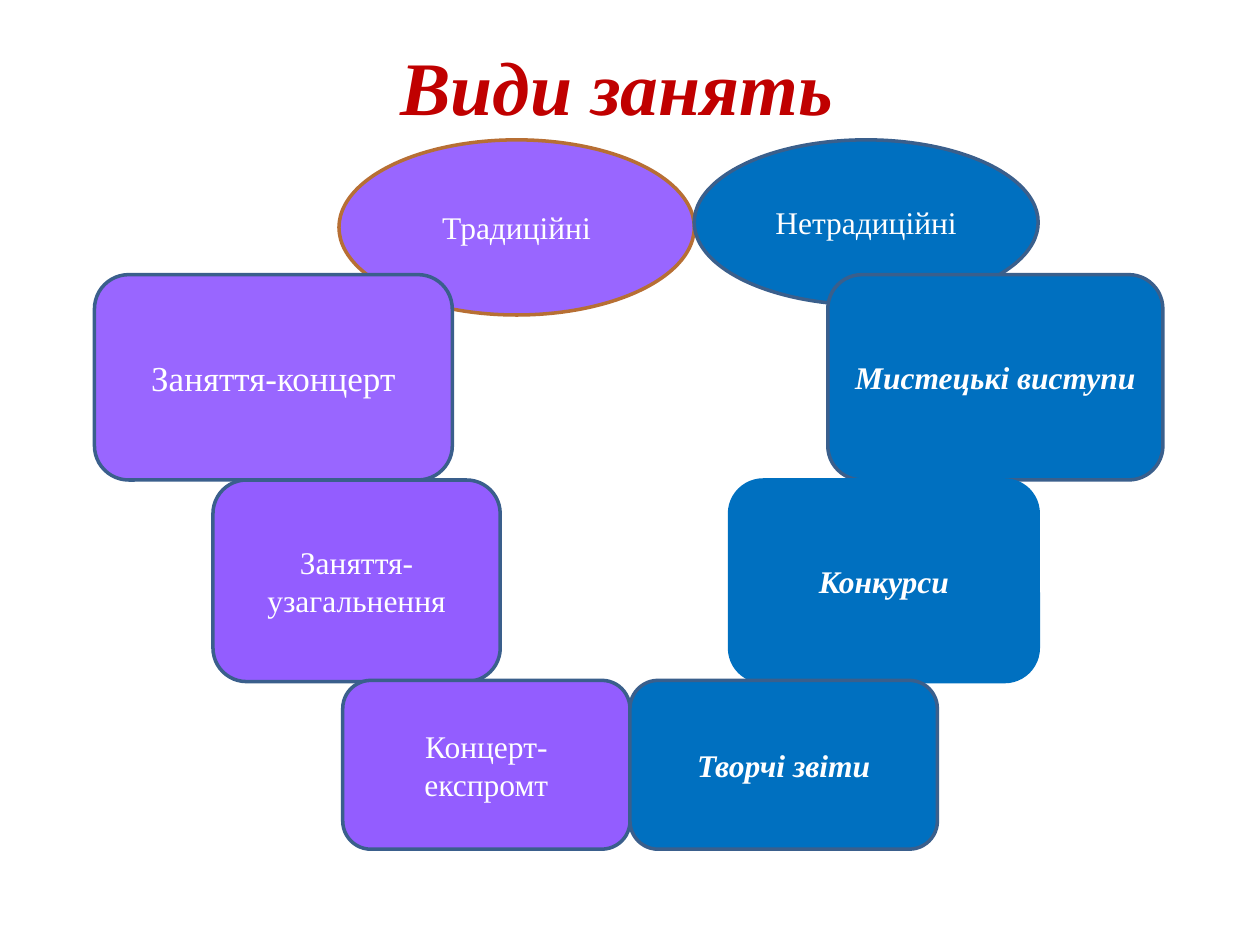
from dataclasses import dataclass

from pptx import Presentation
from pptx.dml.color import RGBColor
from pptx.enum import shapes, text
from pptx.util import Inches, Pt


@dataclass(frozen=True)
class Theme:
    """Hold the colours, font and type sizes of the slide."""
    font: str = "Times New Roman"
    red: str = "C00000"
    white: str = "FFFFFF"
    lilac: str = "9966FF"
    violet: str = "935DFF"
    blue: str = "0070C0"
    edge: str = "3A5F8C"
    brown: str = "B76F34"
    title: float = 43.2
    large: float = 20
    body: float = 18


T = Theme()
ROUND = shapes.MSO_SHAPE.ROUNDED_RECTANGLE
OVAL = shapes.MSO_SHAPE.OVAL
ROWS = ((1.07, 1.63), (2.7, 1.6), (4.29, 1.34))


def write(shape, words, size, color, strong):
    """Centre the words in the shape and format them."""
    frame = shape.text_frame
    frame.word_wrap = True
    frame.vertical_anchor = text.MSO_ANCHOR.MIDDLE
    frame.text = words
    para = frame.paragraphs[0]
    para.alignment = text.PP_ALIGN.CENTER
    font = para.runs[0].font
    font.name, font.size = T.font, Pt(size)
    font.bold = font.italic = strong
    font.color.rgb = RGBColor.from_string(color)


def draw(slide, kind, box, words, fill, edge=T.edge, size=T.body, strong=False):
    """Draw one filled and outlined shape with its label."""
    shape = slide.shapes.add_shape(kind, *map(Inches, box))
    shape.shadow.inherit = False
    shape.fill.solid()
    shape.fill.fore_color.rgb = RGBColor.from_string(fill)
    shape.line.color.rgb = RGBColor.from_string(edge)
    shape.line.width = Pt(2)
    write(shape, words, size, T.white, strong)


def head(slide, box):
    """Place the slide title in the box."""
    label = slide.shapes.add_textbox(*map(Inches, box))
    write(label, "Види занять", T.title, T.red, True)


def branch(slide, box, oval, cards):
    """Place an oval and its stepped cards from the top left of the box."""
    left, top = box[:2]
    shift, width, height, words, look = oval
    draw(slide, OVAL, (left + shift, top, width, height), words, **look)
    for (drop, tall), (shift, width, words, look) in zip(ROWS, cards):
        place = (left + shift, top + drop, width, tall)
        draw(slide, ROUND, place, words, **look)


def main():
    """Build the slide and save it."""
    deck = Presentation()
    deck.slide_width, deck.slide_height = Inches(10), Inches(7.5)
    slide = deck.slides.add_slide(deck.slide_layouts[6])
    head(slide, (1.29, 0.24, 7.21, 0.87))
    plain = {"fill": T.violet}
    bold = {"fill": T.blue, "strong": True}
    branch(
        slide, (0.75, 1.11, 4.76, 5.63),
        (1.94, 2.82, 1.39, "Традиційні", {"fill": T.lilac, "edge": T.brown}),
        ((0, 2.84, "Заняття-концерт", {"fill": T.lilac, "size": T.large}),
         (0.94, 2.28, "Заняття-узагальнення", plain),
         (1.97, 2.28, "Концерт-експромт", plain)))
    branch(
        slide, (5, 1.11, 4.23, 5.63),
        (0.51, 2.73, 1.31, "Нетрадиційні", {"fill": T.blue}),
        ((1.57, 2.66, "Мистецькі виступи", bold),
         (0.79, 2.45, "Конкурси", {**bold, "edge": T.blue}),
         (0, 2.44, "Творчі звіти", bold)))
    deck.save("out.pptx")


if __name__ == "__main__":
    main()
